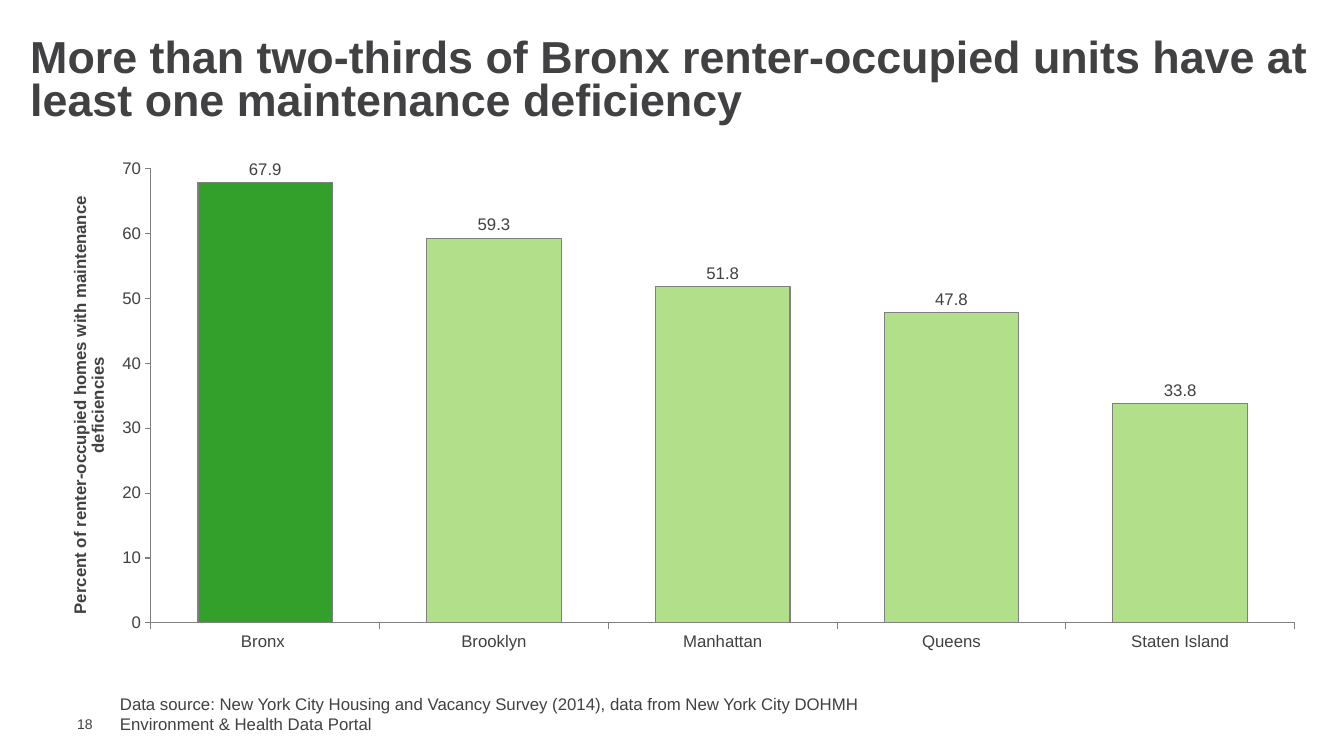
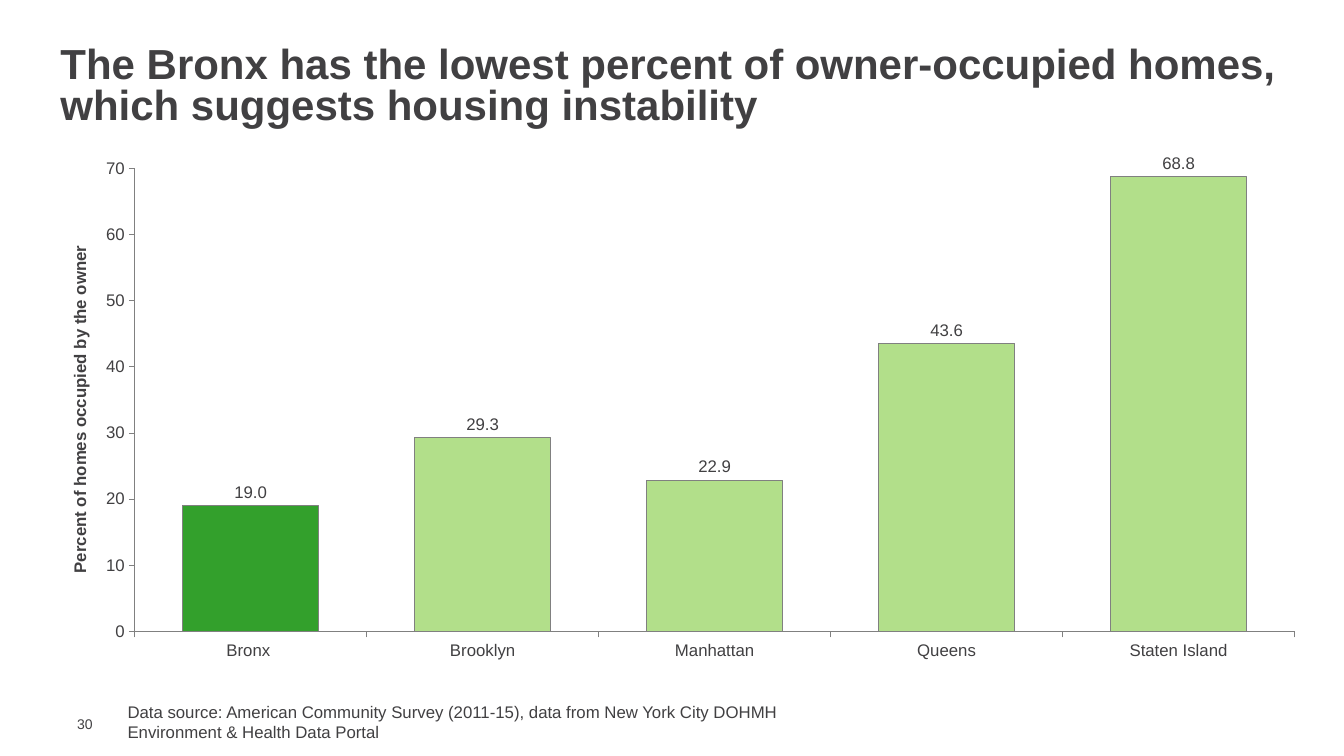
from dataclasses import dataclass

from pptx import Presentation
from pptx import util as u
from pptx.chart.data import CategoryChartData
from pptx.dml.color import RGBColor
from pptx.enum import chart as chart_enum
from pptx.enum import text as text_enum
from pptx.oxml import parse_xml
from pptx.oxml.ns import nsdecls

SLIDE_WIDTH, SLIDE_HEIGHT = u.Inches(13.33), u.Inches(7.5)
COLUMNS, ROWS = 160, 90
BOROUGHS = ("Bronx ", "Brooklyn", "Manhattan", "Queens", "Staten Island")


@dataclass(frozen=True)
class Theme:
    font: str = "Arial"
    ink: RGBColor = RGBColor.from_string("414042")
    axis: RGBColor = RGBColor.from_string("808080")
    bar: RGBColor = RGBColor.from_string("B2DF8A")
    highlight: RGBColor = RGBColor.from_string("33A02C")
    body_size: int = 12
    number_size: int = 10
    line_width: float = 0.75


@dataclass(frozen=True)
class Area:
    """A rectangle in grid columns and rows."""
    left: float
    top: float
    width: float
    height: float

    def box(self) -> tuple[int, int, int, int]:
        column, row = SLIDE_WIDTH / COLUMNS, SLIDE_HEIGHT / ROWS
        return (round(self.left * column), round(self.top * row),
                round(self.width * column), round(self.height * row))


@dataclass(frozen=True)
class Plot:
    """The inner plot area as shares of the chart."""
    x: float
    y: float
    w: float
    h: float


@dataclass(frozen=True)
class BoroughSlide:
    number: str
    title: str
    title_size: int
    title_area: Area
    axis_title: str
    values: tuple[float, ...]
    plot: Plot
    source: str
    source_area: Area


THEME = Theme()
CHART_AREA = Area(7.9, 18.25, 148, 67.7)
NUMBER_AREA = Area(8, 85.2, 5.2, 2)

SLIDES = (
    BoroughSlide(
        "18",
        "More than two-thirds of Bronx renter-occupied units have at least one maintenance deficiency",
        32, Area(2.4, 4, 157.9, 11.5),
        "Percent of renter-occupied homes with maintenance deficiencies",
        (67.9, 59.3, 51.8, 47.8, 33.8), Plot(0.068, 0.027, 0.92, 0.799),
        "Data source: New York City Housing and Vacancy Survey (2014), data from New York City DOHMH\n"
        "Environment & Health Data Portal",
        Area(13.1, 82, 125, 6)),
    BoroughSlide(
        "30",
        "The Bronx has the lowest percent of owner-occupied homes, which suggests housing instability",
        30, Area(6, 5, 153, 10.9),
        "Percent of homes occupied by the owner",
        (19, 29.3, 22.9, 43.6, 68.8), Plot(0.055, 0.027, 0.933, 0.814),
        "Data source: American Community Survey (2011-15), data from New York City DOHMH\n"
        "Environment & Health Data Portal",
        Area(14, 82.9, 119, 6)),
)


def style_font(font, size: int, bold: bool = False) -> None:
    font.name, font.size, font.bold = THEME.font, u.Pt(size), bold
    font.color.rgb = THEME.ink


def style_line(line) -> None:
    line.color.rgb = THEME.axis
    line.width = u.Pt(THEME.line_width)


def write(text_frame, content: str, size: int, bold: bool = False) -> None:
    text_frame.text = content
    for paragraph in text_frame.paragraphs:
        paragraph.alignment = text_enum.PP_ALIGN.LEFT
        for run in paragraph.runs:
            style_font(run.font, size, bold)


def add_title(slide, page: BoroughSlide) -> None:
    title = slide.shapes.title
    title.left, title.top, title.width, title.height = page.title_area.box()
    frame = title.text_frame
    write(frame, page.title, page.title_size, bold=True)
    frame.word_wrap = True
    frame.auto_size = text_enum.MSO_AUTO_SIZE.NONE
    frame.vertical_anchor = text_enum.MSO_ANCHOR.MIDDLE
    frame.paragraphs[0].line_spacing = 0.8


def add_text(slide, area: Area, content: str, size: int):
    frame = slide.shapes.add_textbox(*area.box()).text_frame
    frame.word_wrap = True
    write(frame, content, size)
    return frame


def add_number(slide, number: str) -> None:
    frame = add_text(slide, NUMBER_AREA, number, THEME.number_size)
    frame.vertical_anchor = text_enum.MSO_ANCHOR.MIDDLE
    frame.margin_top = frame.margin_right = frame.margin_bottom = 0


def set_plot(chart, plot: Plot) -> None:
    """Fix the inner plot area, which has no public method."""
    sides = "".join(f'<c:{side}Mode val="edge"/>' for side in "xy")
    sizes = "".join(f'<c:{side} val="{getattr(plot, side)}"/>' for side in "xywh")
    layout = parse_xml(
        f'<c:layout {nsdecls("c")}><c:manualLayout><c:layoutTarget val="inner"/>'
        f'{sides}{sizes}</c:manualLayout></c:layout>')
    plot_area = chart.element.xpath(".//c:plotArea")[0]
    for old in plot_area.xpath("./c:layout"):
        plot_area.remove(old)
    plot_area.insert(0, layout)


def add_borough_chart(slide, page: BoroughSlide) -> None:
    data = CategoryChartData()
    data.categories = BOROUGHS
    data.add_series("Series 1", page.values)
    chart = slide.shapes.add_chart(
        chart_enum.XL_CHART_TYPE.COLUMN_CLUSTERED, *CHART_AREA.box(), data).chart
    chart.has_legend = chart.has_title = False
    style_font(chart.font, THEME.body_size)

    # Axes
    for axis in (chart.category_axis, chart.value_axis):
        axis.has_major_gridlines = False
        axis.major_tick_mark = chart_enum.XL_TICK_MARK.OUTSIDE
        axis.minor_tick_mark = chart_enum.XL_TICK_MARK.NONE
        style_line(axis.format.line)
    value_axis = chart.value_axis
    value_axis.minimum_scale, value_axis.maximum_scale = 0, 70
    value_axis.major_unit = 10
    value_axis.tick_labels.number_format = "0"
    value_axis.tick_labels.number_format_is_linked = False
    frame = value_axis.axis_title.text_frame
    frame.text = page.axis_title
    style_font(frame.paragraphs[0].runs[0].font, THEME.body_size, bold=True)
    body = chart.element.xpath(".//c:valAx/c:title//a:bodyPr")[0]
    body.set("rot", "-5400000")
    body.set("vert", "horz")

    # Bars, with the Bronx picked out
    bars = chart.plots[0]
    bars.gap_width = 70
    bars.vary_by_categories = False
    series = bars.series[0]
    for bar_format, color in ((series.format, THEME.bar),
                              (series.points[0].format, THEME.highlight)):
        bar_format.fill.solid()
        bar_format.fill.fore_color.rgb = color
        style_line(bar_format.line)
    labels = series.data_labels
    labels.show_value = True
    labels.number_format = "0.0"
    labels.number_format_is_linked = False
    labels.position = chart_enum.XL_LABEL_POSITION.OUTSIDE_END
    style_font(labels.font, THEME.body_size)
    set_plot(chart, page.plot)


def main() -> None:
    presentation = Presentation()
    presentation.slide_width, presentation.slide_height = SLIDE_WIDTH, SLIDE_HEIGHT
    title_only = presentation.slide_layouts[5]
    for page in SLIDES:
        slide = presentation.slides.add_slide(title_only)
        add_title(slide, page)
        add_number(slide, page.number)
        add_borough_chart(slide, page)
        add_text(slide, page.source_area, page.source, THEME.body_size)
    presentation.save("out.pptx")


if __name__ == "__main__":
    main()
